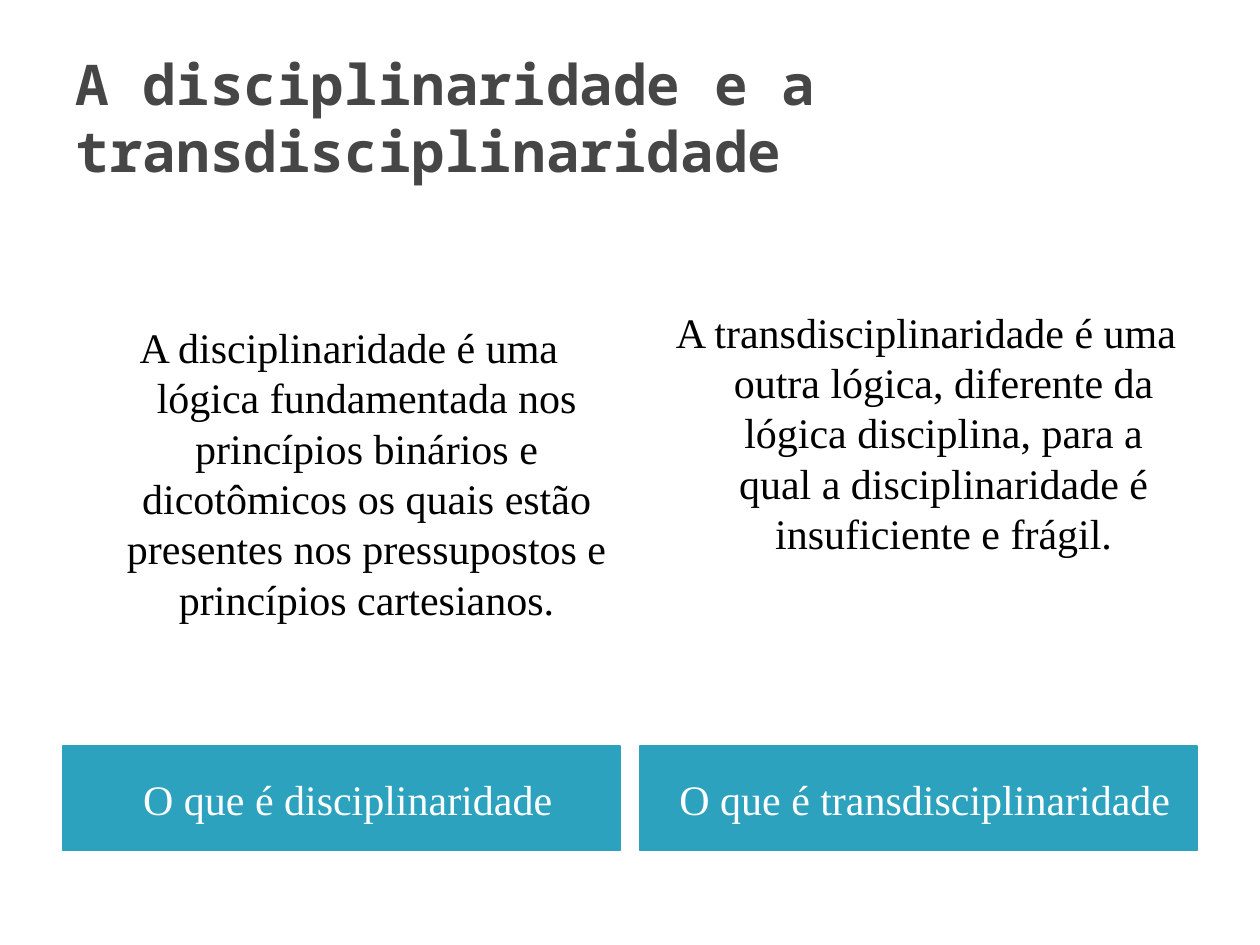
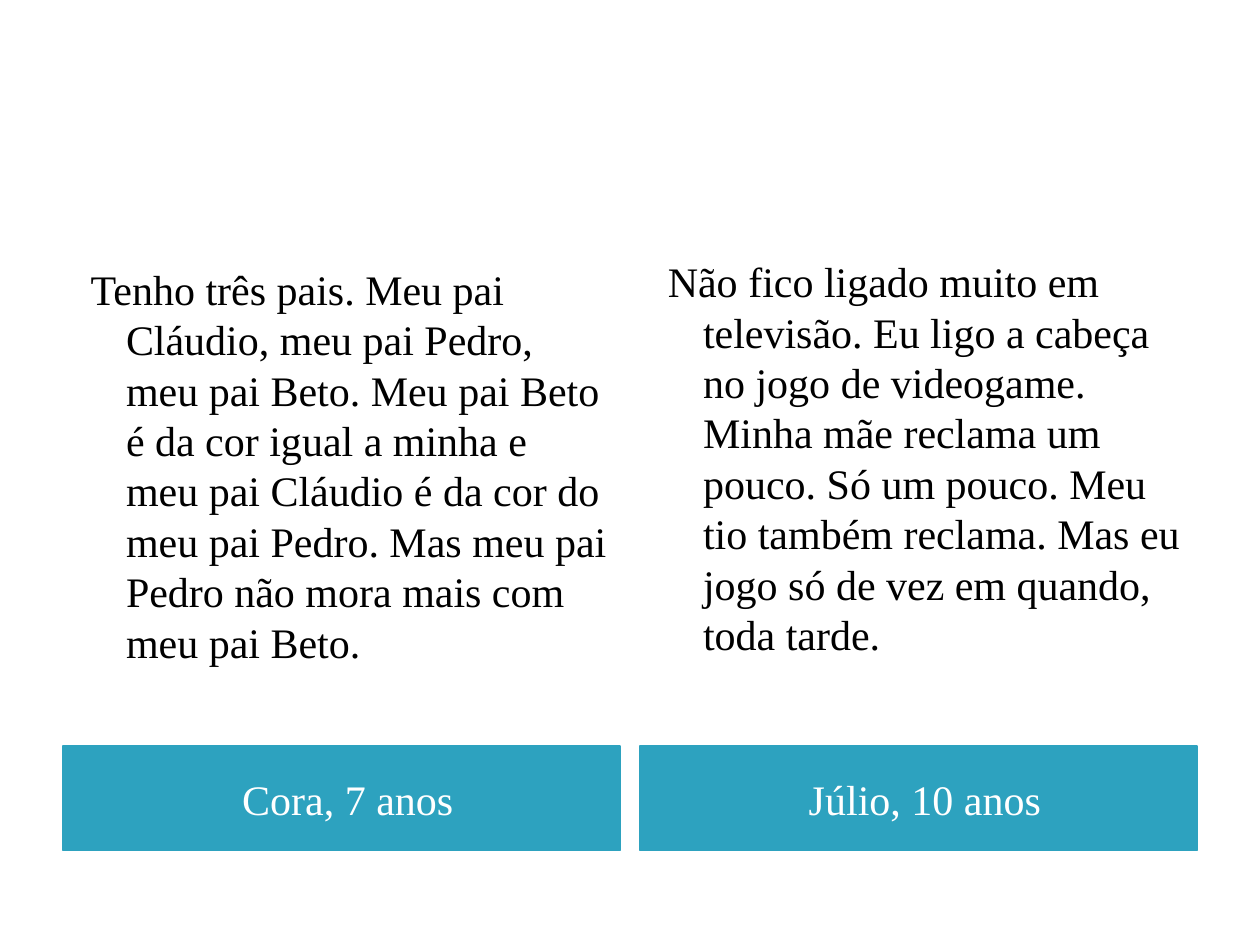
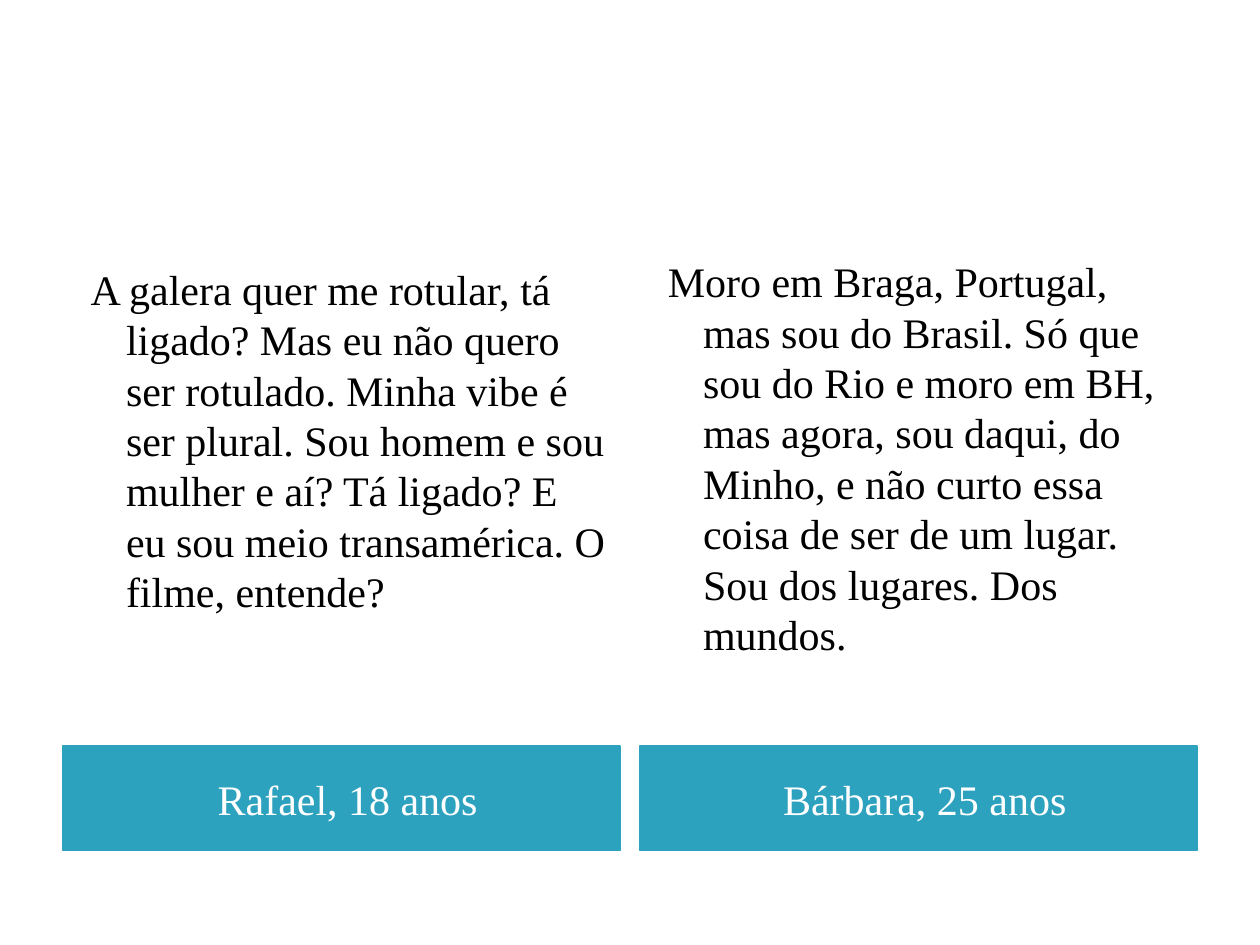
from pptx import Presentation
from pptx.dml.color import RGBColor
from pptx.enum.text import MSO_ANCHOR, MSO_AUTO_SIZE, PP_ALIGN
from pptx.oxml import parse_xml
from pptx.oxml.ns import nsdecls
from pptx.util import Inches, Pt

SLIDES = [
    {
        "title": "A disciplinaridade e a transdisciplinaridade",
        "align": PP_ALIGN.CENTER,
        "lines_above": 2,
        "columns": [
            ("O que é disciplinaridade",
             "A disciplinaridade é uma lógica fundamentada nos princípios binários e "
             "dicotômicos os quais estão presentes nos pressupostos e princípios cartesianos."),
            ("O que é transdisciplinaridade",
             "A transdisciplinaridade é uma outra lógica, diferente da lógica disciplina, "
             "para a qual a disciplinaridade é insuficiente e frágil."),
        ],
    },
    {
        "title": None,
        "align": PP_ALIGN.LEFT,
        "lines_above": 1,
        "columns": [
            ("Cora, 7 anos",
             "Tenho três pais. Meu pai Cláudio, meu pai Pedro, meu pai Beto. Meu pai Beto "
             "é da cor igual a minha e meu pai Cláudio é da cor do meu pai Pedro. Mas meu "
             "pai Pedro não mora mais com meu pai Beto."),
            ("Júlio, 10 anos",
             "Não fico ligado muito em televisão. Eu ligo a cabeça no jogo de videogame. "
             "Minha mãe reclama um pouco. Só um pouco. Meu tio também reclama. Mas eu jogo "
             "só de vez em quando, toda tarde."),
        ],
    },
    {
        "title": None,
        "align": PP_ALIGN.LEFT,
        "lines_above": 1,
        "columns": [
            ("Rafael, 18 anos",
             "A galera quer me rotular, tá ligado? Mas eu não quero ser rotulado. Minha "
             "vibe é ser plural. Sou homem e sou mulher e aí? Tá ligado? E eu sou meio "
             "transamérica. O filme, entende?"),
            ("Bárbara, 25 anos",
             "Moro em Braga, Portugal, mas sou do Brasil. Só que sou do Rio e moro em BH, "
             "mas agora, sou daqui, do Minho, e não curto essa coisa de ser de um lugar. "
             "Sou dos lugares. Dos mundos."),
        ],
    },
]

TEAL = RGBColor(0x2D, 0xA2, 0xBF)
GRAY = RGBColor(0x46, 0x46, 0x46)
WHITE = RGBColor(0xFF, 0xFF, 0xFF)
BLACK = RGBColor(0x00, 0x00, 0x00)
TITLE_FONT = "Noto Sans Mono"
TEXT_FONT = "Times New Roman"

COMPARISON_LAYOUT = 4
COLUMN_PLACEHOLDERS = [(1, 2), (3, 4)]
MARGIN = 0.5
COLUMN_WIDTH = 4.42
COLUMN_STEP = 4.58
LINE_HEIGHT = 0.4
LINE_GAPS = [0.06, 0]


def place(shape, left, top, width, height):
    shape.left, shape.top = Inches(left), Inches(top)
    shape.width, shape.height = Inches(width), Inches(height)


def write(shape, text, font_name, size, color, align, anchor, bold=False, indent=None):
    frame = shape.text_frame
    frame.text = text
    frame.word_wrap = True
    frame.auto_size = MSO_AUTO_SIZE.NONE
    frame.vertical_anchor = anchor
    paragraph = frame.paragraphs[0]
    paragraph.alignment = align
    paragraph.space_before = Pt(0)
    paragraph.line_spacing = Pt(size * 1.2)
    if indent:
        properties = paragraph._p.get_or_add_pPr()
        properties.set("marL", str(Inches(indent[0])))
        properties.set("indent", str(Inches(indent[1])))
        properties.append(parse_xml(f"<a:buNone {nsdecls('a')}/>"))
    font = paragraph.runs[0].font
    font.name = font_name
    font.size = Pt(size)
    font.bold = bold
    font.color.rgb = color


def add_title(slide, text):
    title = slide.shapes.title
    if text is None:
        title.element.getparent().remove(title.element)
        return
    place(title, MARGIN, 0.3, 9, 1.25)
    write(title, text, TITLE_FONT, 32, GRAY, PP_ALIGN.LEFT, MSO_ANCHOR.MIDDLE, bold=True)


def format_band(band, text, left):
    place(band, left, 5.92, COLUMN_WIDTH, 0.83)
    band.fill.solid()
    band.fill.fore_color.rgb = TEAL
    band.line.color.rgb = TEAL
    band.line.width = Pt(0.75)
    band.text_frame.margin_left = Inches(0.2)
    write(band, text, TEXT_FONT, 24, WHITE, PP_ALIGN.CENTER, MSO_ANCHOR.MIDDLE)


def format_body(body, text, left, align, top_margin):
    place(body, left, 1.58, COLUMN_WIDTH, 4.31)
    body.text_frame.margin_top = Inches(top_margin)
    write(body, text, TEXT_FONT, 24, BLACK, align, MSO_ANCHOR.TOP, indent=(0.4, -0.28))


def add_slide(presentation, content):
    slide = presentation.slides.add_slide(presentation.slide_layouts[COMPARISON_LAYOUT])
    placeholders = {shape.placeholder_format.idx: shape for shape in slide.placeholders}
    add_title(slide, content["title"])
    for column, (heading, text) in enumerate(content["columns"]):
        band_index, body_index = COLUMN_PLACEHOLDERS[column]
        left = MARGIN + column * COLUMN_STEP
        top_margin = 0.05 + content["lines_above"] * (LINE_HEIGHT + LINE_GAPS[column])
        format_band(placeholders[band_index], heading, left)
        format_body(placeholders[body_index], text, left, content["align"], top_margin)


def main():
    presentation = Presentation()
    presentation.slide_width, presentation.slide_height = Inches(10), Inches(7.5)
    for content in SLIDES:
        add_slide(presentation, content)
    presentation.save("out.pptx")


if __name__ == "__main__":
    main()
